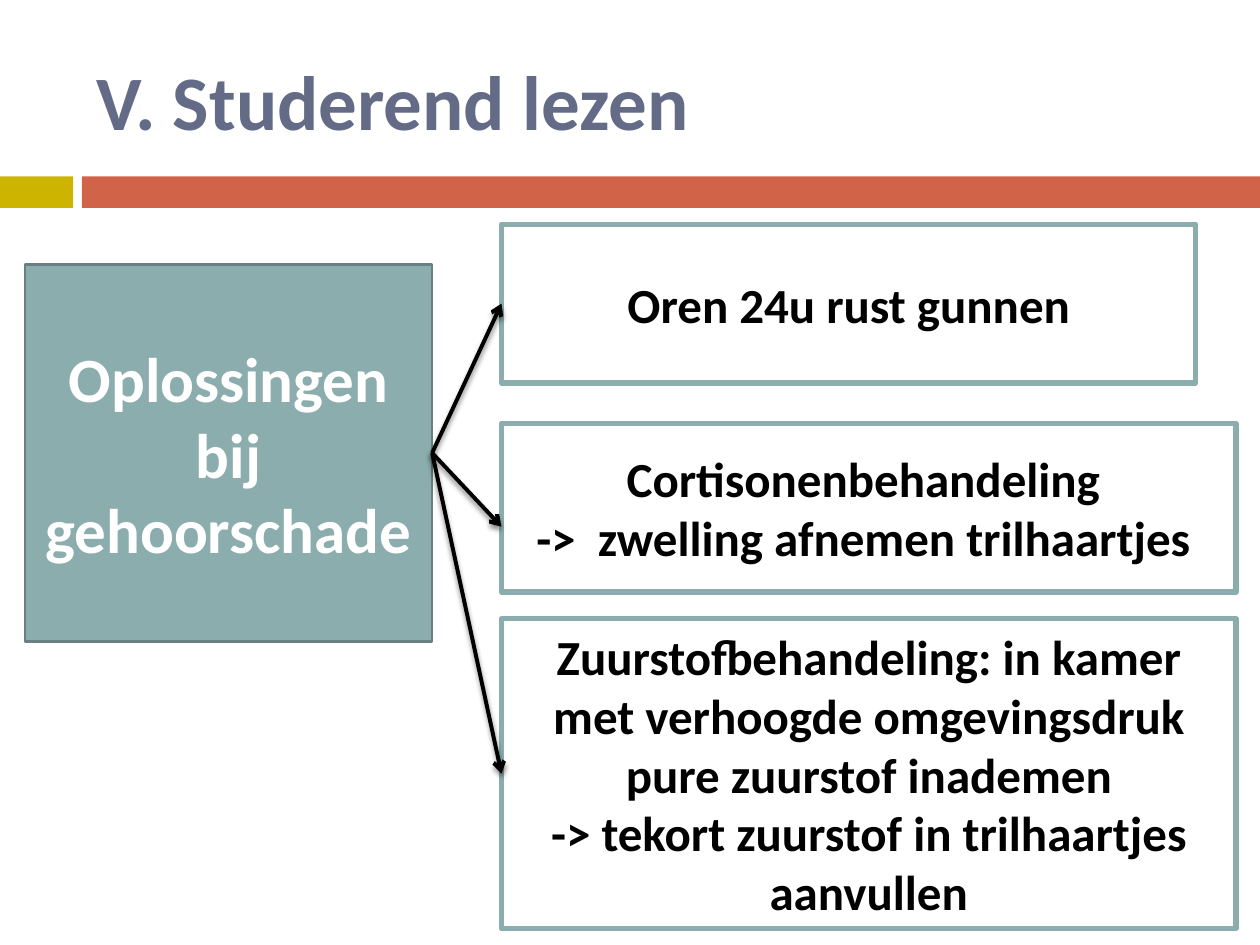
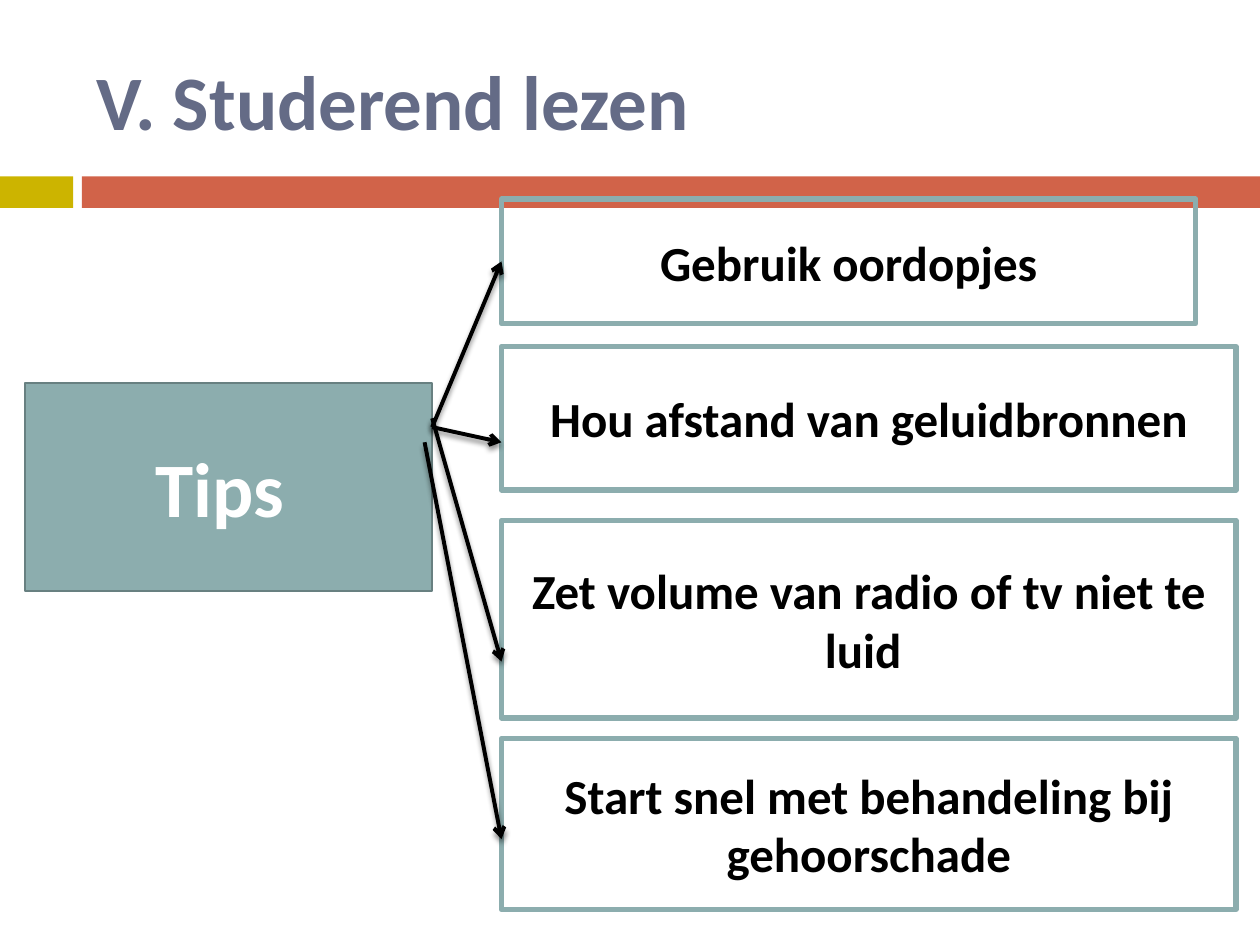
import pptx
import pptx.util
import pptx.dml.color
import pptx.enum.shapes
import pptx.enum.text
import pptx.oxml
import pptx.oxml.ns

Inches = pptx.util.Inches
Pt = pptx.util.Pt

TITLE = "V. Studerend lezen"
FONT = "Calibri"
TITLE_COLOUR, TEAL, DARK_TEAL = "646B86", "8CADAE", "688081"
WHITE, BLACK = "FFFFFF", "000000"
BANDS = [((0, 1.4, 0.58, 0.25), "CCB400"), ((0.65, 1.4, 9.35, 0.25), "D16349")]

HUB_LEFT, HUB_WIDTH = 0.2, 3.23
BOX_LEFT, NARROW, WIDE = 3.98, 5.51, 5.83
TOP, LEFT, BOTTOM, RIGHT = range(4)

# "start" and "end" hold a free point; without them the arrow joins the side's middle
DIAGRAMS = [
    {
        "hub": {"text": "Oplossingen bij gehoorschade", "top": 2.1, "height": 2.99, "size": 36},
        "boxes": [
            {"lines": ["Oren 24u rust gunnen"], "top": 1.78, "height": 1.26, "width": NARROW},
            {"lines": ["Cortisonenbehandeling ", "->  zwelling afnemen trilhaartjes "],
             "top": 3.36, "height": 1.34, "end": (BOX_LEFT, 4.18)},
            {"lines": ["Zuurstofbehandeling: in kamer met verhoogde omgevingsdruk pure zuurstof inademen",
                       "-> tekort zuurstof in trilhaartjes aanvullen"],
             "top": 4.91, "height": 2.46},
        ],
    },
    {
        "hub": {"text": "Tips ", "top": 3.04, "height": 1.65, "size": 44},
        "boxes": [
            {"lines": ["Gebruik oordopjes"], "top": 1.58, "height": 0.99, "width": NARROW,
             "start": (3.43, 3.39)},
            {"lines": ["Hou afstand van geluidbronnen"], "top": 2.75, "height": 1.14,
             "start": (3.43, 3.39), "end": (BOX_LEFT, 3.51)},
            {"lines": ["Zet volume van radio of tv niet te luid "], "top": 4.13, "height": 1.57,
             "start": (3.43, 3.32), "end": (BOX_LEFT, 5.25)},
            {"lines": ["Start snel met behandeling bij gehoorschade"], "top": 5.86, "height": 1.36,
             "start": (3.37, 3.51), "end": (BOX_LEFT, 6.66)},
        ],
    },
]

TAIL_XML = '<a:tailEnd %s type="arrow"/>' % pptx.oxml.ns.nsdecls("a")
SHADOW_XML = (
    '<a:effectLst %s><a:outerShdw blurRad="38100" dist="30000" dir="5400000" rotWithShape="0">'
    '<a:srgbClr val="000000"><a:alpha val="45000"/></a:srgbClr></a:outerShdw></a:effectLst>'
    % pptx.oxml.ns.nsdecls("a")
)


def colour(hex_string):
    return pptx.dml.color.RGBColor.from_string(hex_string)


def write(shape, lines, size, text_colour, alignment):
    frame = shape.text_frame
    frame.word_wrap = True
    frame.vertical_anchor = pptx.enum.text.MSO_ANCHOR.MIDDLE
    frame.text = "\n".join(lines)
    for paragraph in frame.paragraphs:
        paragraph.alignment = alignment
        paragraph.font.name = FONT
        paragraph.font.size = Pt(size)
        paragraph.font.bold = True
        paragraph.font.color.rgb = colour(text_colour)


def add_rectangle(slide, place, fill=None, line=None, line_width=0):
    shape = slide.shapes.add_shape(
        pptx.enum.shapes.MSO_SHAPE.RECTANGLE, *[Inches(length) for length in place])
    shape.shadow.inherit = False
    if fill:
        shape.fill.solid()
        shape.fill.fore_color.rgb = colour(fill)
    else:
        shape.fill.background()
    if line:
        shape.line.color.rgb = colour(line)
        shape.line.width = Pt(line_width)
    else:
        shape.line.fill.background()
    return shape


def add_arrow(slide, hub, box, start, end):
    points = [Inches(length) for length in (start or (0, 0)) + (end or (0, 0))]
    arrow = slide.shapes.add_connector(pptx.enum.shapes.MSO_CONNECTOR.STRAIGHT, *points)
    if not start:
        arrow.begin_connect(hub, RIGHT)
    if not end:
        arrow.end_connect(box, LEFT)
    arrow.line.color.rgb = colour(BLACK)
    arrow.line.width = Pt(2.25)
    properties = arrow.element.spPr
    properties.find(pptx.oxml.ns.qn("a:ln")).append(pptx.oxml.parse_xml(TAIL_XML))
    properties.append(pptx.oxml.parse_xml(SHADOW_XML))


def add_frame(slide):
    for place, fill in BANDS:
        add_rectangle(slide, place, fill)
    title = slide.shapes.add_textbox(Inches(0.67), Inches(0.25), Inches(8.92), Inches(1.08))
    write(title, [TITLE], 44, TITLE_COLOUR, pptx.enum.text.PP_ALIGN.LEFT)


def add_diagram(slide, diagram):
    centre = pptx.enum.text.PP_ALIGN.CENTER
    hub = diagram["hub"]
    hub_shape = add_rectangle(
        slide, (HUB_LEFT, hub["top"], HUB_WIDTH, hub["height"]), TEAL, DARK_TEAL, 1.5)
    write(hub_shape, [hub["text"]], hub["size"], WHITE, centre)
    for box in diagram["boxes"]:
        place = (BOX_LEFT, box["top"], box.get("width", WIDE), box["height"])
        box_shape = add_rectangle(slide, place, line=TEAL, line_width=3)
        write(box_shape, box["lines"], 28, BLACK, centre)
        add_arrow(slide, hub_shape, box_shape, box.get("start"), box.get("end"))


def main():
    presentation = pptx.Presentation()
    presentation.slide_width = Inches(10)
    presentation.slide_height = Inches(7.5)
    for diagram in DIAGRAMS:
        slide = presentation.slides.add_slide(presentation.slide_layouts[6])
        add_frame(slide)
        add_diagram(slide, diagram)
    presentation.save("out.pptx")


if __name__ == "__main__":
    main()
